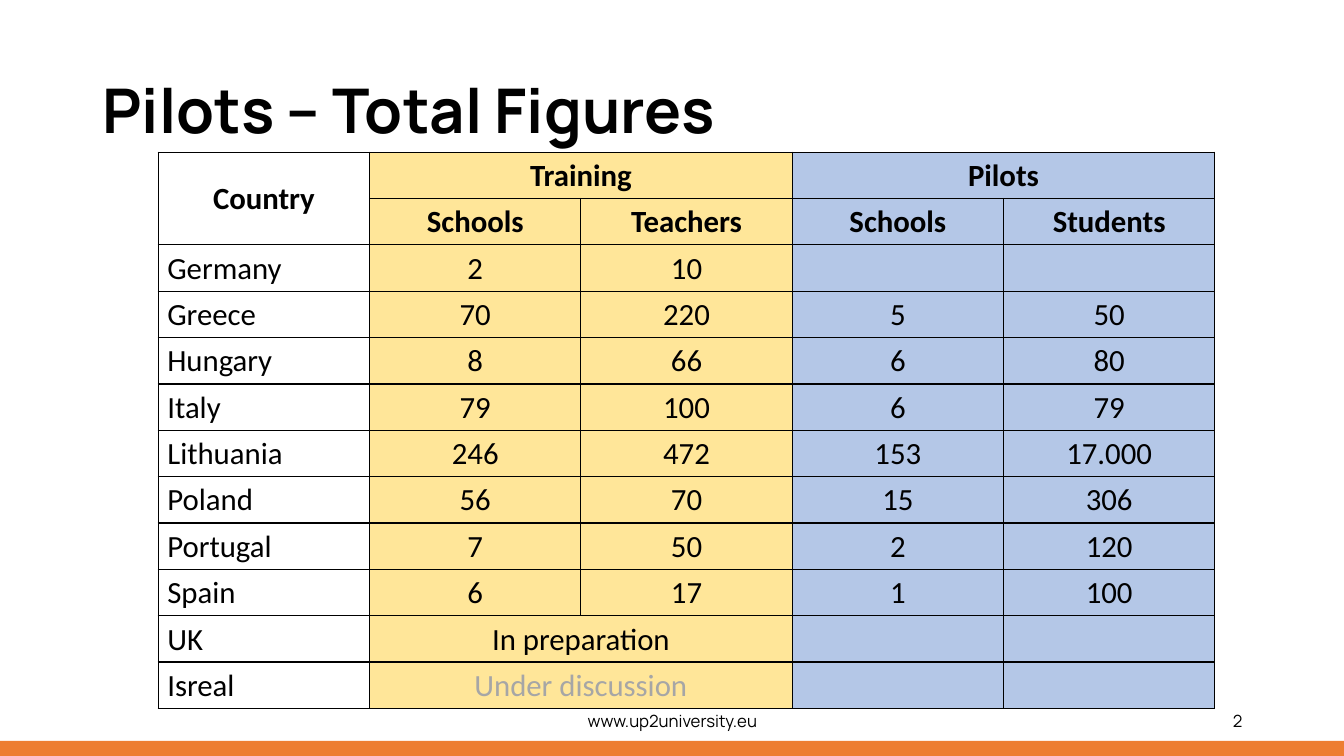
from lxml import etree
from pptx import Presentation
from pptx.dml.color import RGBColor
from pptx.enum.shapes import MSO_SHAPE
from pptx.enum.text import MSO_ANCHOR, PP_ALIGN
from pptx.oxml.ns import qn
from pptx.util import Inches, Pt

BLACK = RGBColor(0x00, 0x00, 0x00)
GREY = RGBColor(0xA6, 0xA6, 0xA6)
ORANGE = RGBColor(0xED, 0x7D, 0x31)
YELLOW = RGBColor(0xFF, 0xE6, 0x99)
BLUE = RGBColor(0xB4, 0xC7, 0xE7)
LEFT, CENTER, RIGHT = PP_ALIGN.LEFT, PP_ALIGN.CENTER, PP_ALIGN.RIGHT
TOP, MIDDLE = MSO_ANCHOR.TOP, MSO_ANCHOR.MIDDLE
RECTANGLE = MSO_SHAPE.RECTANGLE

TITLE_FONT = {"name": "Manrope", "size": Pt(44), "bold": True}
FOOTER_FONT = {"name": "Manrope", "size": Pt(12), "bold": False}
HEADER_FONT = {"name": "Calibri", "size": Pt(22), "bold": True}
FIGURE_FONT = {**HEADER_FONT, "bold": False}
CELL_MARGINS = {"margin_left": Inches(0.09), "margin_right": Inches(0.09),
                "margin_top": Inches(0.05), "margin_bottom": Inches(0.04)}


def write(paragraph, text, font_format, align, color=BLACK):
    paragraph.alignment = align
    run = paragraph.add_run()
    run.text = text
    for attribute, value in font_format.items():
        setattr(run.font, attribute, value)
    run.font.color.rgb = color


def add_border(cell):
    cell_properties = cell._tc.get_or_add_tcPr()
    for position, side in enumerate(("a:lnL", "a:lnR", "a:lnT", "a:lnB")):
        line = etree.Element(qn(side), w=str(Pt(1)))
        line_fill = etree.SubElement(line, qn("a:solidFill"))
        etree.SubElement(line_fill, qn("a:srgbClr"), val=str(BLACK))
        cell_properties.insert(position, line)


prs = Presentation()
prs.slide_width, prs.slide_height = Inches(13.33), Inches(7.5)
slide = prs.slides.add_slide(prs.slide_layouts[6])

# Bottom band
band = slide.shapes.add_shape(RECTANGLE, 0, Inches(7.35), prs.slide_width, Inches(0.15))
band.shadow.inherit = False
band.fill.solid()
band.fill.fore_color.rgb = ORANGE
band.line.fill.background()

# Title, web address and page number
captions = [
    ("Pilots – Total Figures", (0.92, 0.4, 10.08, 1.45), TITLE_FONT, LEFT),
    ("www.up2university.eu", (4.42, 6.95, 4.5, 0.4), FOOTER_FONT, CENTER),
    ("2", (9.42, 6.95, 3, 0.4), FOOTER_FONT, RIGHT),
]
for text, place, font_format, align in captions:
    caption = slide.shapes.add_textbox(*map(Inches, place)).text_frame
    caption.word_wrap = True
    caption.vertical_anchor = MIDDLE
    caption.paragraphs[0].line_spacing = 0.9 if font_format is TITLE_FONT else 1.0
    write(caption.paragraphs[0], text, font_format, align)

# Figures by country
HEADER_ROWS = 2
figures = [
    ("Country", "Training", "", "Pilots", ""),
    ("", "Schools", "Teachers", "Schools", "Students"),
    ("Germany", "2", "10", "", ""),
    ("Greece", "70", "220", "5", "50"),
    ("Hungary", "8", "66", "6", "80"),
    ("Italy", "79", "100", "6", "79"),
    ("Lithuania", "246", "472", "153", "17.000"),
    ("Poland", "56", "70", "15", "306"),
    ("Portugal", "7", "50", "2", "120"),
    ("Spain", "6", "17", "1", "100"),
    ("UK", "In preparation", "", "", ""),
    ("Isreal", "Under discussion", "", "", ""),
]
column_fills = [None, YELLOW, YELLOW, BLUE, BLUE]
merges = [((0, 0), (1, 0)), ((0, 1), (0, 2)), ((0, 3), (0, 4)),
          ((10, 1), (10, 2)), ((11, 1), (11, 2))]

table = slide.shapes.add_table(
    len(figures), len(column_fills),
    Inches(1.57), Inches(1.51), Inches(10.48), Inches(5.52)).table
table.first_row = table.horz_banding = False
for start, end in merges:
    table.cell(*start).merge(table.cell(*end))

for row, values in enumerate(figures):
    table.rows[row].height = Inches(0.46)
    is_header = row < HEADER_ROWS
    for column, value in enumerate(values):
        cell = table.cell(row, column)
        for attribute, margin in CELL_MARGINS.items():
            setattr(cell, attribute, margin)
        cell.vertical_anchor = MIDDLE if is_header else TOP
        if column_fills[column] is None:
            cell.fill.background()
        else:
            cell.fill.solid()
            cell.fill.fore_color.rgb = column_fills[column]
        add_border(cell)
        if value:
            write(cell.text_frame.paragraphs[0], value,
                  HEADER_FONT if is_header else FIGURE_FONT,
                  CENTER if is_header or column else LEFT,
                  GREY if value == "Under discussion" else BLACK)

prs.save("out.pptx")
